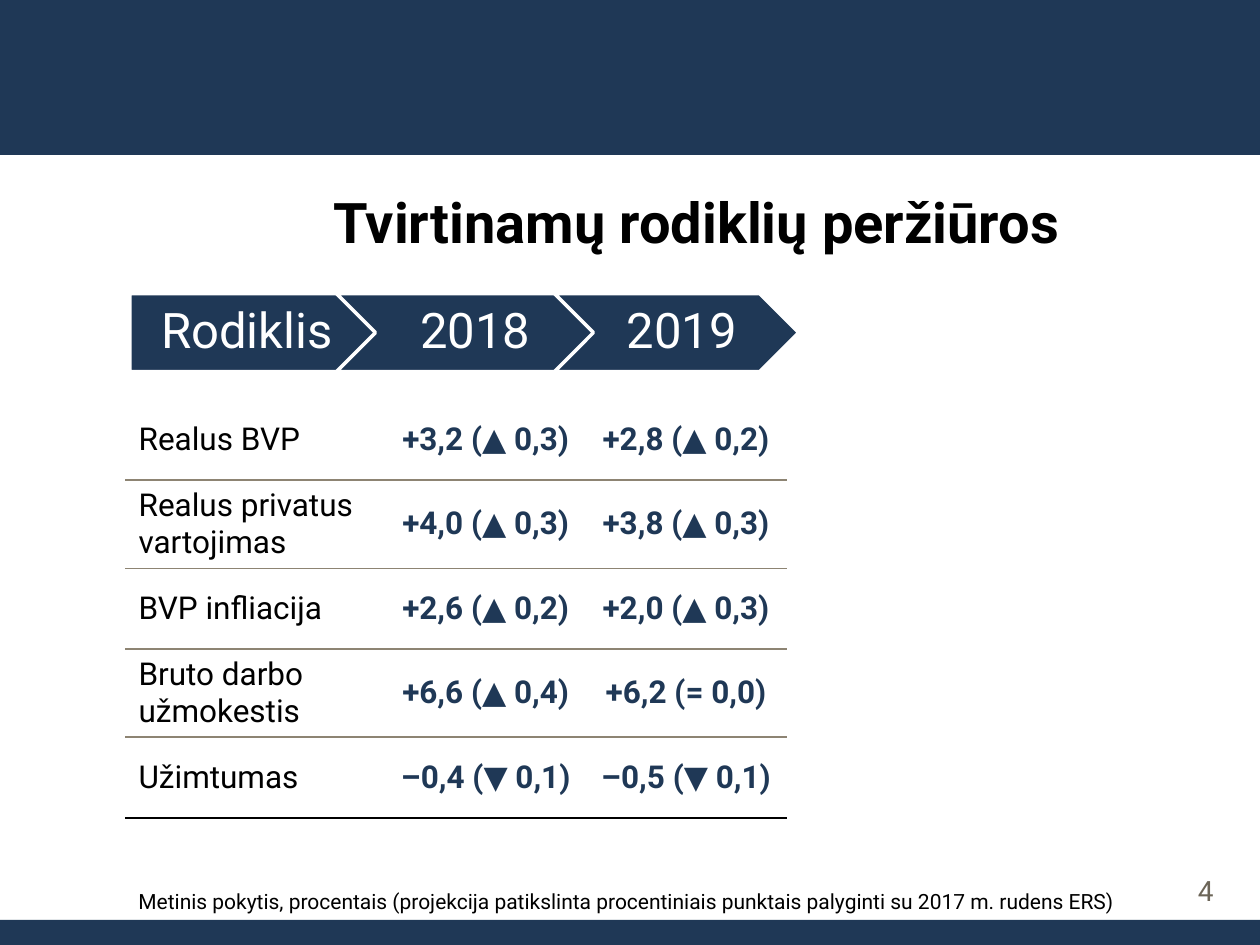
import pptx
import pptx.dml.color
import pptx.enum.shapes
import pptx.enum.text
import pptx.oxml
import pptx.oxml.ns
import pptx.util

Inches = pptx.util.Inches
Align = pptx.enum.text.PP_ALIGN
Anchor = pptx.enum.text.MSO_ANCHOR
Shape = pptx.enum.shapes.MSO_SHAPE

COLORS = {
    "navy": "1F3856",
    "white": "FFFFFF",
    "black": "000000",
    "rule": "8D8473",
    "number": "6C6558",
}


class SlideBuilder:
    font_name = "Roboto"

    def __init__(self, slide):
        self.slide = slide

    def color(self, name):
        return pptx.dml.color.RGBColor.from_string(COLORS[name])

    def set_text(self, text_frame, text, size, color, bold=False, align=Align.LEFT):
        text_frame.text = text
        paragraph = text_frame.paragraphs[0]
        paragraph.alignment = align
        for run in paragraph.runs:
            run.font.name = self.font_name
            run.font.size = pptx.util.Pt(size)
            run.font.bold = bold
            run.font.color.rgb = self.color(color)
        return paragraph

    def shape(self, kind, left, top, width, height, outline=None):
        shape = self.slide.shapes.add_shape(
            kind, Inches(left), Inches(top), Inches(width), Inches(height)
        )
        shape.shadow.inherit = False
        shape.fill.solid()
        shape.fill.fore_color.rgb = self.color("navy")
        if outline:
            shape.line.color.rgb = self.color(outline)
            shape.line.width = pptx.util.Pt(2)
        else:
            shape.line.fill.background()
        return shape

    def header_arrow(self, kind, left, width, text, inset, align):
        shape = self.shape(kind, left, 2.33, width, 0.62, "white")
        text_frame = shape.text_frame
        text_frame.word_wrap = True
        text_frame.vertical_anchor = Anchor.MIDDLE
        text_frame.margin_left = Inches(inset)
        text_frame.margin_right = Inches(0.04)
        text_frame.margin_top = text_frame.margin_bottom = Inches(0.08)
        paragraph = self.set_text(text_frame, text, 28, "white", align=align)
        paragraph.line_spacing = 0.9

    def text(self, left, top, width, height, text, size, color="black",
             bold=False, align=Align.LEFT, anchor=Anchor.TOP):
        box = self.slide.shapes.add_textbox(
            Inches(left), Inches(top), Inches(width), Inches(height)
        )
        box.text_frame.word_wrap = True
        box.text_frame.vertical_anchor = anchor
        self.set_text(box.text_frame, text, size, color, bold, align)

    def border(self, cell, side, color):
        line = pptx.oxml.parse_xml(
            f'<a:{side} {pptx.oxml.ns.nsdecls("a")} w="12700"><a:solidFill>'
            f'<a:srgbClr val="{COLORS[color]}"/></a:solidFill></a:{side}>'
        )
        cell._tc.get_or_add_tcPr().insert(0, line)

    def table(self, left, top, column_widths, row_height, rows):
        table = self.slide.shapes.add_table(
            len(rows), len(column_widths), Inches(left), Inches(top),
            Inches(sum(column_widths)), Inches(row_height * len(rows))
        ).table
        table.first_row = False
        table.horz_banding = False
        for column, width in zip(table.columns, column_widths):
            column.width = Inches(width)
        last_row = len(rows) - 1
        for row_index, values in enumerate(rows):
            table.rows[row_index].height = Inches(row_height)
            for column_index, value in enumerate(values):
                cell = table.cell(row_index, column_index)
                cell.vertical_anchor = Anchor.MIDDLE
                self.border(cell, "lnB", "black" if row_index == last_row else "rule")
                if row_index:
                    self.border(cell, "lnT", "rule")
                cell.fill.background()
                if column_index:
                    self.set_text(cell.text_frame, value, 18, "navy", True, Align.CENTER)
                else:
                    self.set_text(cell.text_frame, value, 18, "black")


def main():
    presentation = pptx.Presentation()
    presentation.slide_width = Inches(10)
    presentation.slide_height = Inches(7.5)
    slide = presentation.slides.add_slide(presentation.slide_layouts[6])
    builder = SlideBuilder(slide)

    builder.shape(Shape.RECTANGLE, 0, 0, 10, 1.23)
    builder.shape(Shape.RECTANGLE, 0, 7.3, 10, 0.2)
    builder.text(9.41, 6.88, 0.47, 0.42, "4", 16, "number")

    builder.table(1, 3.17, (2.06, 1.59, 1.59), 0.64, (
        ("Realus BVP", "+3,2 (▲ 0,3)", "+2,8 (▲ 0,2)"),
        ("Realus privatus vartojimas", "+4,0 (▲ 0,3)", "+3,8 (▲ 0,3)"),
        ("BVP infliacija", "+2,6 (▲ 0,2)", "+2,0 (▲ 0,3)"),
        ("Bruto darbo užmokestis", "+6,6 (▲ 0,4)", "+6,2 (= 0,0)"),
        ("Užimtumas", "–0,4 (▼ 0,1)", "–0,5 (▼ 0,1)"),
    ))

    for kind, left, width, text, inset, align in (
        (Shape.PENTAGON, 1.03, 2.02, "Rodiklis", 0.25, Align.LEFT),
        (Shape.CHEVRON, 2.67, 2.12, "2018", 0.12, Align.CENTER),
        (Shape.CHEVRON, 4.4, 1.94, "2019", 0.12, Align.CENTER),
    ):
        builder.header_arrow(kind, left, width, text, inset, align)

    builder.text(
        1, 7, 8.55, 0.3,
        "Metinis pokytis, procentais (projekcija patikslinta procentiniais "
        "punktais palyginti su 2017 m. rudens ERS)",
        12, align=Align.JUSTIFY,
    )
    builder.text(1.03, 1.29, 9, 0.78, "Tvirtinamų rodiklių peržiūros", 32,
                 bold=True, align=Align.CENTER, anchor=Anchor.BOTTOM)

    presentation.save("out.pptx")


if __name__ == "__main__":
    main()
